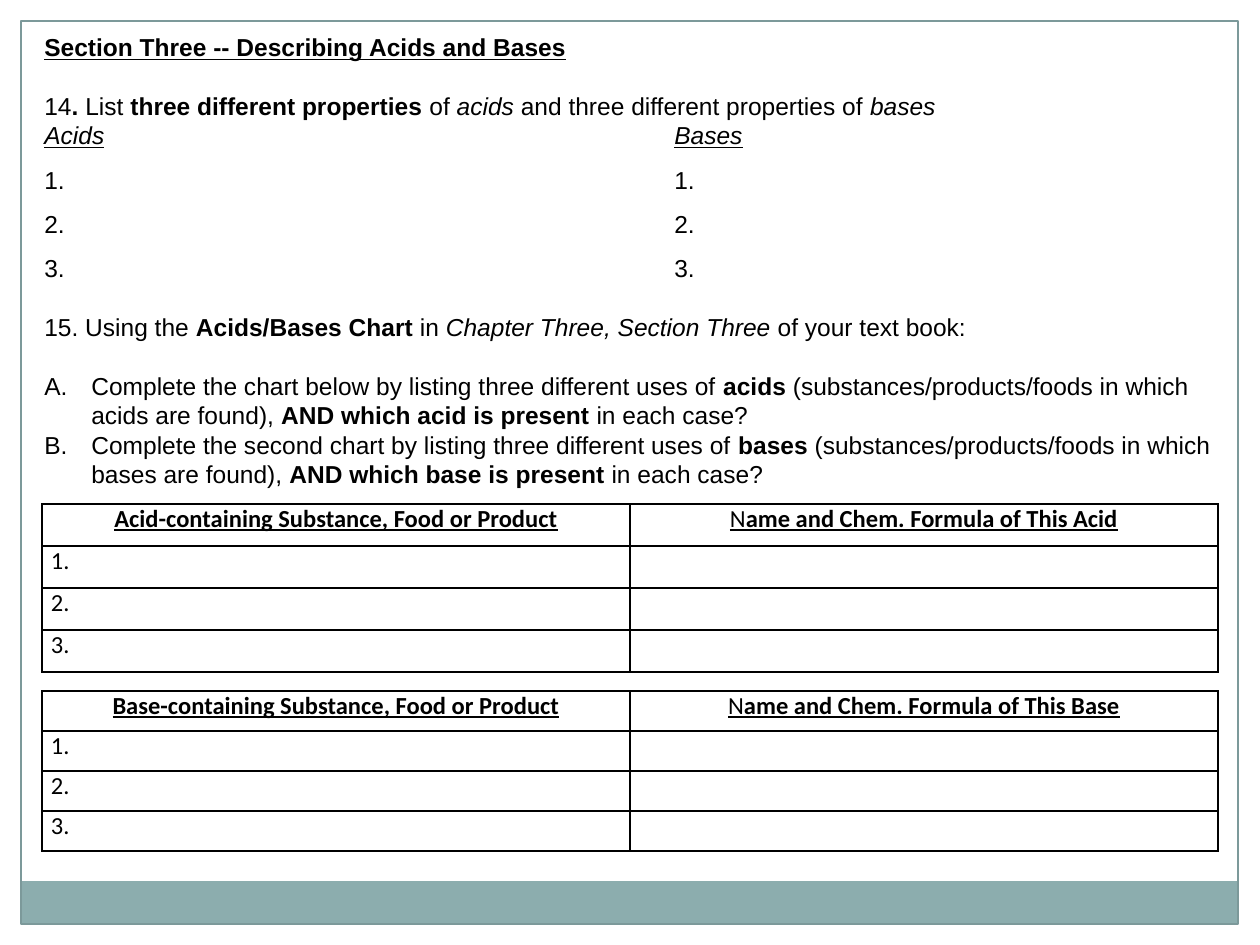
"""Builds a worksheet slide on acids and bases with two answer tables."""
import pptx
import pptx.util
import pptx.dml.color
import pptx.enum.shapes
import pptx.enum.text
import pptx.oxml
from pptx.oxml.ns import nsdecls, qn

COLORS = {"ink": "000000", "bar": "8CADAE", "frame": "7C999A"}
TEXT_SIZE = 14
LINE_PITCH = 16.85
BASES_TAB = 630
HANGING = 47

QUESTIONS = [
    {"runs": [("Section Three -- Describing Acids and Bases", "bu")]},
    {"gap": 1, "runs": [
        ("14", ""), (". ", "b"), ("List", ""), (" three different properties", "b"),
        (" of ", ""), ("acids", "i"), (" and three different properties of ", ""), ("bases", "i")]},
    {"tab": True, "runs": [("Acids", "iu"), ("\t", ""), ("Bases", "iu")]},
    *[{"tab": True, "lines": 1.5, "runs": [(f"{number}.\t{number}.", "")]} for number in (1, 2, 3)],
    {"gap": 1, "runs": [
        ("15. Using the ", ""), ("Acids/Bases Chart", "b"), (" in ", ""),
        ("Chapter Three, Section Three", "i"), (" of your text book:", "")]},
    *[{"gap": gap, "lettered": True, "runs": [
        (f"Complete the {chart} by listing three different uses of ", ""), (f"{kind}s", "b"),
        (f" (substances/products/foods in which {kind}s are found), ", ""),
        (f"AND which {kind} is present", "b"), (" in each case?", "")]}
      for gap, chart, kind in [(1, "chart below", "acid"), (0, "second chart", "base")]],
]
TABLES = [("Acid", 504, 42), ("Base", 691, 40)]
TABLE_LEFT, COLUMN_WIDTH, CELL_INSET = 42, 588, 9


def px(length):
    return pptx.util.Emu(round(length * 914400 / 126))


def rgb(name):
    return pptx.dml.color.RGBColor.from_string(COLORS[name])


def add_runs(para, runs, font):
    for text, style in runs:
        span = para.add_run()
        span.text = text
        span.font.name = font
        span.font.size = pptx.util.Pt(TEXT_SIZE)
        span.font.color.rgb = rgb("ink")
        span.font.bold = "b" in style
        span.font.italic = "i" in style
        span.font.underline = "u" in style


def add_rectangle(page, left, top, width, height):
    shape = page.shapes.add_shape(
        pptx.enum.shapes.MSO_SHAPE.RECTANGLE, px(left), px(top), px(width), px(height))
    shape.shadow.inherit = False
    return shape


def add_border(page):
    bar = add_rectangle(page, 21, 881, 1217, 43)
    bar.fill.solid()
    bar.fill.fore_color.rgb = rgb("bar")
    bar.line.fill.background()
    frame = add_rectangle(page, 21, 21, 1217, 903)
    frame.fill.background()
    frame.line.color.rgb = rgb("frame")
    frame.line.width = pptx.util.Pt(0.75)


def add_questions(page):
    box = page.shapes.add_textbox(px(32), px(24), px(1207), px(532))
    frame = box.text_frame
    frame.word_wrap = True
    frame.margin_top = px(8)
    for index, question in enumerate(QUESTIONS):
        para = frame.add_paragraph() if index else frame.paragraphs[0]
        para.line_spacing = pptx.util.Pt(LINE_PITCH * question.get("lines", 1))
        para.space_before = pptx.util.Pt(LINE_PITCH * question.get("gap", 0))
        properties = para._p.get_or_add_pPr()
        if question.get("lettered"):
            properties.set("marL", str(px(HANGING)))
            properties.set("indent", str(-px(HANGING)))
            properties.append(pptx.oxml.parse_xml(
                f'<a:buFont {nsdecls("a")} typeface="+mj-lt"/>'))
            properties.append(pptx.oxml.parse_xml(
                f'<a:buAutoNum {nsdecls("a")} type="alphaUcPeriod"/>'))
        if question.get("tab"):
            properties.append(pptx.oxml.parse_xml(
                f'<a:tabLst {nsdecls("a")}><a:tab pos="{px(BASES_TAB)}" algn="l"/></a:tabLst>'))
        add_runs(para, question["runs"], "Arial")


def style_cell(cell):
    cell.margin_left = cell.margin_right = px(CELL_INSET)
    cell.margin_top = cell.margin_bottom = 0
    properties = cell._tc.get_or_add_tcPr()
    for side in ("lnL", "lnR", "lnT", "lnB"):
        properties.append(pptx.oxml.parse_xml(
            f'<a:{side} {nsdecls("a")} w="{pptx.util.Pt(1)}"><a:solidFill>'
            f'<a:srgbClr val="{COLORS["ink"]}"/></a:solidFill></a:{side}>'))
    cell.fill.background()


def add_answer_table(page, kind, top, row_height):
    rows = [
        [[(f"{kind}-containing Substance, Food or Product", "bu")],
         [("N", "u"), (f"ame and Chem. Formula of This {kind}", "bu")]],
        *[[[(f"{number}.", "")], []] for number in (1, 2, 3)],
    ]
    table = page.shapes.add_table(
        len(rows), 2, px(TABLE_LEFT), px(top),
        px(2 * COLUMN_WIDTH), px(len(rows) * row_height)).table
    table.first_row = table.horz_banding = False
    for column in table.columns:
        column.width = px(COLUMN_WIDTH)
    for row_index, row in enumerate(rows):
        table.rows[row_index].height = px(row_height)
        for column_index, runs in enumerate(row):
            cell = table.cell(row_index, column_index)
            style_cell(cell)
            para = cell.text_frame.paragraphs[0]
            para.font.size = pptx.util.Pt(TEXT_SIZE)
            if row_index == 0:
                para.alignment = pptx.enum.text.PP_ALIGN.CENTER
            add_runs(para, runs, "Calibri")


def main():
    deck = pptx.Presentation()
    deck.slide_width, deck.slide_height = px(1260), px(945)
    page = deck.slides.add_slide(deck.slide_layouts[6])
    add_border(page)
    add_questions(page)
    for kind, top, row_height in TABLES:
        add_answer_table(page, kind, top, row_height)
    deck.save("out.pptx")


if __name__ == "__main__":
    main()
